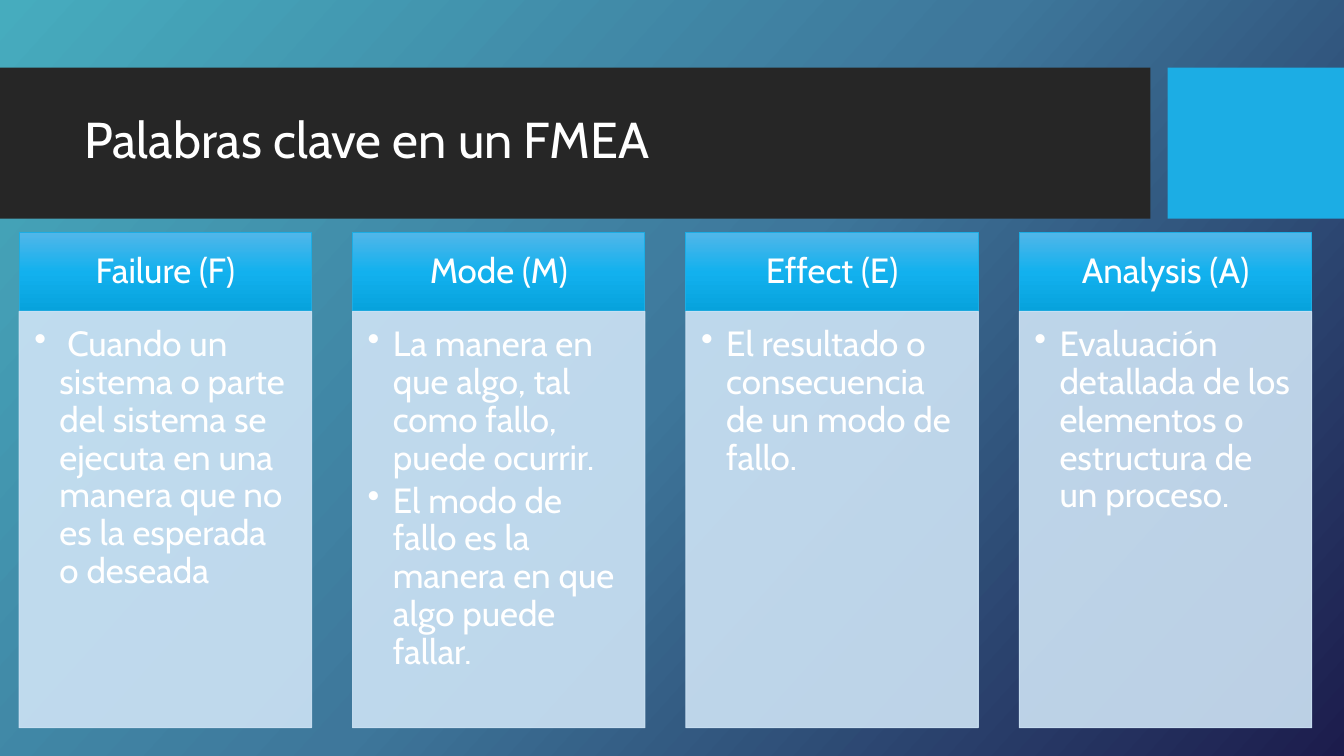
"""Build the FMEA key words slide."""
import pptx
import pptx.dml.color
import pptx.enum.shapes
import pptx.enum.text
import pptx.oxml
import pptx.oxml.ns
import pptx.util
from dataclasses import dataclass

TITLE = "Palabras clave en un FMEA"
CARDS = [
    ("Failure (F)", [" Cuando un sistema o parte del sistema se ejecuta en una "
                     "manera que no es la esperada o deseada"]),
    ("Mode (M)", ["La manera en que algo, tal como fallo, puede ocurrir.",
                  "El modo de fallo es la manera en que algo puede fallar."]),
    ("Effect (E)", ["El resultado o consecuencia de un modo de fallo."]),
    ("Analysis (A)", ["Evaluación detallada de los elementos o estructura "
                      "de un proceso."]),
]


@dataclass(frozen=True)
class Theme:
    """Hold the colours, font and type sizes."""
    font: str = "Cabin"
    head: int = 36
    text: int = 25
    white: str = "FFFFFF"
    dark: str = "262626"
    blue: str = "1CADE4"
    pale: str = "CDE3F5"
    back: tuple = ("46ACBE", "3E779B", "1C1C4C")
    glow: tuple = ("51B6E9", "12B1EE", "07A2DC")


LOOK = Theme()
BARS = [(0, 11.41, LOOK.dark), (11.58, 1.75, LOOK.blue)]
LEFT, LAST, WIDE = 0.19, 10.11, 2.9
HEAD_TOP, HEAD_TALL = 2.31, 0.78
BODY_TALL = 4.13
STEP = (LAST - LEFT) / (len(CARDS) - 1)

Inches, Pt = pptx.util.Inches, pptx.util.Pt
Align, Anchor = pptx.enum.text.PP_ALIGN, pptx.enum.text.MSO_ANCHOR
RECT = pptx.enum.shapes.MSO_SHAPE.RECTANGLE
NS = pptx.oxml.ns.nsdecls("a")
tag = pptx.oxml.ns.qn


def rgb(code):
    """Turn a hex code into a colour."""
    return pptx.dml.color.RGBColor.from_string(code)


def put(item, vals):
    """Set each named value on an object."""
    for name, val in vals.items():
        setattr(item, name, val)


def blend(fill, root, codes, angle):
    """Fill with evenly spaced gradient stops, angle clockwise."""
    fill.gradient()
    fill.gradient_angle = 360 - angle
    stops = next(root.iter(tag("a:gsLst")))
    stops.clear()
    for i, code in enumerate(codes):
        pos = 100000 * i // (len(codes) - 1)
        stops.append(pptx.oxml.parse_xml(
            f'<a:gs {NS} pos="{pos}"><a:srgbClr val="{code}"/></a:gs>'))


def box(slide, left, top, wide, tall, fill=None, edge=None):
    """Add a rectangle with optional solid fill and edge."""
    shape = slide.shapes.add_shape(RECT, *map(Inches, (left, top, wide, tall)))
    shape.shadow.inherit = False
    if fill:
        shape.fill.solid()
        shape.fill.fore_color.rgb = rgb(fill)
    if edge:
        shape.line.color.rgb = rgb(edge)
        shape.line.width = Pt(0.75)
    else:
        shape.line.fill.background()
    return shape


def fade(shape, share):
    """Make the fill and line of a shape partly clear."""
    for clr in shape.element.spPr.iter(tag("a:srgbClr")):
        clr.append(pptx.oxml.parse_xml(f'<a:alpha {NS} val="{share * 1000}"/>'))


def write(shape, lines, size, pads, anchor, align, dots=False):
    """Write formatted paragraphs into a shape."""
    frame = shape.text_frame
    sides = ("margin_left", "margin_top", "margin_right", "margin_bottom")
    put(frame, {"word_wrap": True, "vertical_anchor": anchor,
                "auto_size": pptx.enum.text.MSO_AUTO_SIZE.NONE,
                **dict(zip(sides, map(Inches, pads)))})
    for i, line in enumerate(lines):
        para = frame.add_paragraph() if i else frame.paragraphs[0]
        para.text = line
        put(para, {"alignment": align, "line_spacing": 0.9, "space_before": Pt(0)})
        if dots:
            put(para, {"level": 1, "space_after": Pt(3.75)})
            props = para._p.get_or_add_pPr()
            props.set("marL", str(Inches(0.25)))
            props.set("indent", str(Inches(-0.25)))
            props.append(pptx.oxml.parse_xml(f'<a:buChar {NS} char="•"/>'))
        put(para.font, {"name": LOOK.font, "size": Pt(size)})
        para.font.color.rgb = rgb(LOOK.white)


def main():
    """Compose and save the slide."""
    deck = pptx.Presentation()
    put(deck, {"slide_width": Inches(13.33), "slide_height": Inches(7.5)})
    slide = deck.slides.add_slide(deck.slide_layouts[5])
    blend(slide.background.fill, slide.element, LOOK.back, 42)

    title = slide.shapes.title
    put(title, {"left": Inches(0.74), "top": Inches(0.82),
                "width": Inches(10.51), "height": Inches(1.18)})
    write(title, [TITLE], LOOK.head, (0.1, 0.05, 0.1, 0.05),
          Anchor.MIDDLE, Align.LEFT)
    for left, wide, fill in BARS:
        bar = box(slide, left, 0.67, wide, 1.5, fill)
        title.element.addprevious(bar.element)

    for i, (name, lines) in enumerate(CARDS):
        left = LEFT + i * STEP
        head = box(slide, left, HEAD_TOP, WIDE, HEAD_TALL, edge=LOOK.blue)
        blend(head.fill, head.element, LOOK.glow, 90)
        write(head, [name], LOOK.text, (0.19, 0.11, 0.19, 0.11),
              Anchor.MIDDLE, Align.CENTER)
        body = box(slide, left, HEAD_TOP + HEAD_TALL, WIDE, BODY_TALL,
                   LOOK.pale, LOOK.pale)
        fade(body, 90)
        write(body, lines, LOOK.text, (0.15, 0.15, 0.19, 0.22),
              Anchor.TOP, Align.LEFT, dots=True)

    deck.save("out.pptx")


if __name__ == "__main__":
    main()
